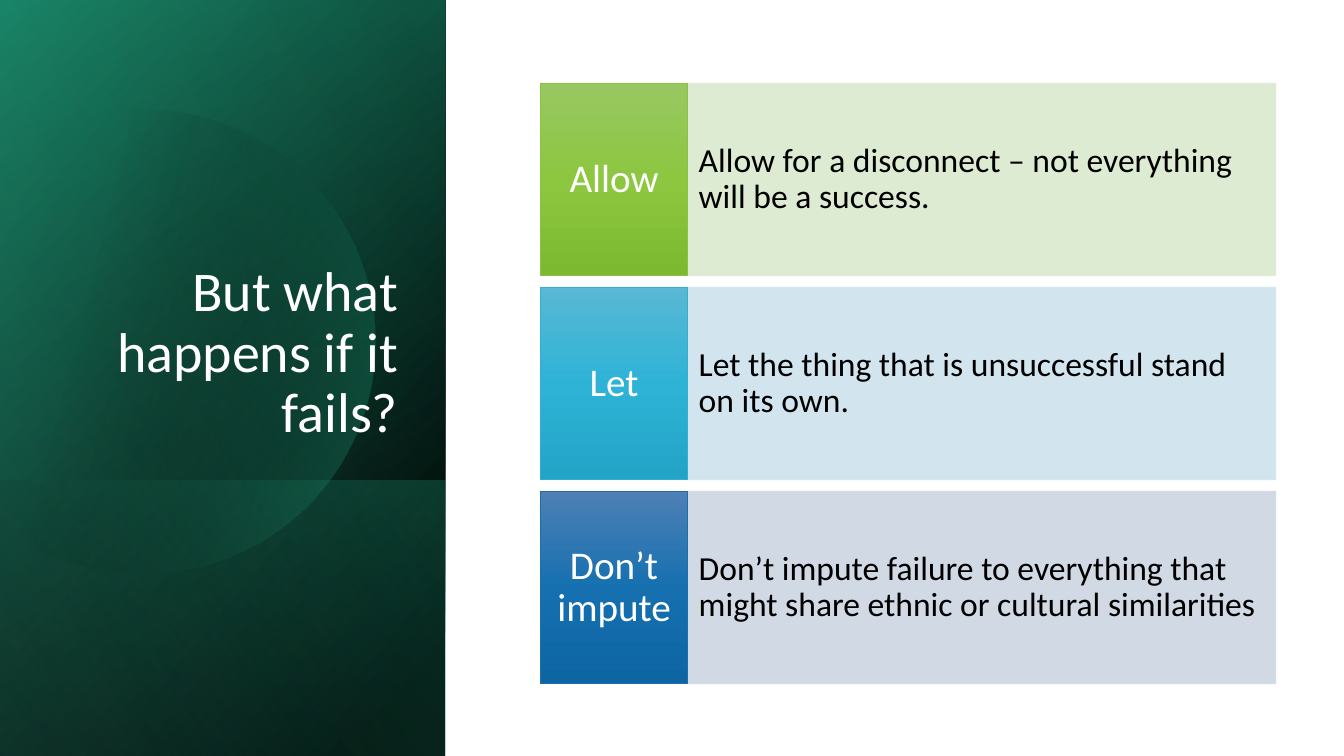
from itertools import pairwise
from math import cos, radians, sin, tan

from lxml.etree import SubElement
from pptx import Presentation
from pptx.dml.color import RGBColor
from pptx.enum.shapes import MSO_SHAPE
from pptx.enum.text import MSO_ANCHOR, PP_ALIGN
from pptx.oxml.ns import qn
from pptx.util import Cm, Pt

COLORS = {
    "white": "FFFFFF",
    "black": "000000",
    "deep_green": "16745A",
    "green": "1D9A78",
    "mint": "5AE0BB",
}

SLIDE_WIDTH, SLIDE_HEIGHT = 33.87, 19.05
PANEL_WIDTH = 11.22
LABEL_LEFT, LABEL_WIDTH = 13.62, 3.71
DETAIL_WIDTH = 14.82
ROW_TOP, ROW_HEIGHT, ROW_STEP = 2.1, 4.85, 5.14

ROWS = [
    {
        "label": "Allow",
        "detail": "Allow for a disconnect – not everything will be a success.",
        "stops": ["98C862", "8CC73F", "7DB831"],
        "line": "8BC145",
        "tint": "DAE9CF",
    },
    {
        "label": "Let",
        "detail": "Let the thing that is unsuccessful stand on its own.",
        "stops": ["59B8D4", "2EB3D6", "21A4C6"],
        "line": "36AFCE",
        "tint": "CEE3ED",
    },
    {
        "label": "Don’t impute",
        "detail": "Don’t impute failure to everything that might share ethnic "
                  "or cultural similarities",
        "stops": ["4E80B5", "1670B0", "0D65A3"],
        "line": "1D6FA9",
        "tint": "CDD5E2",
    },
]


def set_alpha(color_element, percent):
    SubElement(color_element, qn("a:alpha"), val=str(percent * 1000))


def fill_gradient(shape, stops, angle):
    shape.fill.gradient()
    gradient = shape.element.spPr.find(qn("a:gradFill"))
    for child in list(gradient):
        gradient.remove(child)
    gradient.set("rotWithShape", "1")
    stop_list = SubElement(gradient, qn("a:gsLst"))
    for position, color, alpha in stops:
        stop = SubElement(stop_list, qn("a:gs"), pos=str(position * 1000))
        color_element = SubElement(stop, qn("a:srgbClr"), val=color)
        if alpha < 100:
            set_alpha(color_element, alpha)
    SubElement(gradient, qn("a:lin"), ang=str(angle * 60000), scaled="0")


def fill_tint(fill_format, color):
    fill_format.solid()
    fill_format.fore_color.rgb = RGBColor.from_string(color)


def add_rectangle(slide, left, top, width, height):
    shape = slide.shapes.add_shape(
        MSO_SHAPE.RECTANGLE, Cm(left), Cm(top), Cm(width), Cm(height))
    shape.shadow.inherit = False
    shape.line.fill.background()
    return shape


def add_panel_layer(slide, top, height, stops, angle):
    offset = (height - PANEL_WIDTH) / 2
    shape = add_rectangle(slide, -offset, top + offset, height, PANEL_WIDTH)
    shape.rotation = 90
    shape.element.spPr.find(qn("a:xfrm")).set("flipH", "1")
    fill_gradient(shape, stops, angle)


def circle_point(center_x, center_y, radius, angle):
    return (center_x + radius * cos(radians(angle)),
            center_y + radius * sin(radians(angle)))


def curve_segments(shape, center, radius, angles):
    segments = list(shape.element.iter(qn("a:lnTo")))
    for segment, (start, end) in zip(segments, pairwise(angles)):
        handle = 4 / 3 * tan(radians(end - start) / 4) * radius
        controls = [
            circle_point(*circle_point(*center, radius, start),
                         handle, start + 90),
            circle_point(*circle_point(*center, radius, end),
                         handle, end - 90),
        ]
        segment.tag = qn("a:cubicBezTo")
        for index, (x, y) in enumerate(controls):
            point = segment.makeelement(qn("a:pt"), {
                "x": str(Cm(x) - shape.left), "y": str(Cm(y) - shape.top)})
            segment.insert(index, point)


def add_panel_circle(slide, center, radius, half_sweep):
    angles = [-half_sweep, -90, 0, 90, half_sweep]
    points = [
        tuple(Cm(value) for value in circle_point(*center, radius, angle))
        for angle in angles
    ]
    builder = slide.shapes.build_freeform(*points[0])
    builder.add_line_segments(points[1:], close=True)
    shape = builder.convert_to_shape()
    curve_segments(shape, center, radius, angles)
    shape.shadow.inherit = False
    shape.line.fill.background()
    fill_gradient(
        shape, [(29, COLORS["black"], 0), (100, COLORS["green"], 43)], 14)


def write_text(shape, text, size, color, align=PP_ALIGN.LEFT,
               anchor=MSO_ANCHOR.MIDDLE, margins=(0.25, 0.13)):
    frame = shape.text_frame
    frame.word_wrap = True
    frame.vertical_anchor = anchor
    frame.margin_left = frame.margin_right = Cm(margins[0])
    frame.margin_top = frame.margin_bottom = Cm(margins[1])
    paragraph = frame.paragraphs[0]
    paragraph.alignment = align
    paragraph.line_spacing = 0.9
    run = paragraph.add_run()
    run.text = text
    run.font.name = "Calibri"
    run.font.size = Pt(size)
    run.font.color.rgb = RGBColor.from_string(color)


def add_row(slide, top, row):
    detail = add_rectangle(
        slide, LABEL_LEFT + LABEL_WIDTH, top, DETAIL_WIDTH, ROW_HEIGHT)
    fill_tint(detail.fill, row["tint"])
    fill_tint(detail.line.fill, row["tint"])
    detail.line.width = Pt(0.5)
    for color_element in detail.element.spPr.iter(qn("a:srgbClr")):
        set_alpha(color_element, 90)
    write_text(detail, row["detail"], 24, COLORS["black"],
               margins=(0.28, 1.24))

    label = add_rectangle(slide, LABEL_LEFT, top, LABEL_WIDTH, ROW_HEIGHT)
    stops = [(50 * index, color, 100)
             for index, color in enumerate(row["stops"])]
    fill_gradient(label, stops, 90)
    fill_tint(label.line.fill, row["line"])
    label.line.width = Pt(0.5)
    write_text(label, row["label"], 28, COLORS["white"],
               align=PP_ALIGN.CENTER, margins=(0.2, 0.48))


def add_title_panel(slide):
    black, green = COLORS["black"], COLORS["green"]
    add_panel_layer(slide, 0, SLIDE_HEIGHT,
                    [(8, black, 100), (100, COLORS["deep_green"], 100)], 50)
    add_panel_layer(slide, 0, SLIDE_HEIGHT,
                    [(0, black, 0), (99, green, 46)], 30)
    add_panel_layer(slide, 12.1, 6.95,
                    [(2, green, 29), (100, black, 30)], 130)
    add_panel_circle(slide, (3.63, 8.61), 5.84, 133)
    add_panel_layer(slide, 0, SLIDE_HEIGHT,
                    [(0, black, 0), (99, COLORS["mint"], 11)], 120)
    title = slide.shapes.add_textbox(Cm(1.62), Cm(4.69), Cm(8.66), Cm(6.65))
    write_text(title, "But what happens if it fails?", 40, COLORS["white"],
               align=PP_ALIGN.RIGHT, anchor=MSO_ANCHOR.BOTTOM)


def main():
    presentation = Presentation()
    presentation.slide_width = Cm(SLIDE_WIDTH)
    presentation.slide_height = Cm(SLIDE_HEIGHT)
    slide = presentation.slides.add_slide(presentation.slide_layouts[6])
    add_title_panel(slide)
    for index, row in enumerate(ROWS):
        add_row(slide, ROW_TOP + index * ROW_STEP, row)
    presentation.save("out.pptx")


if __name__ == "__main__":
    main()
